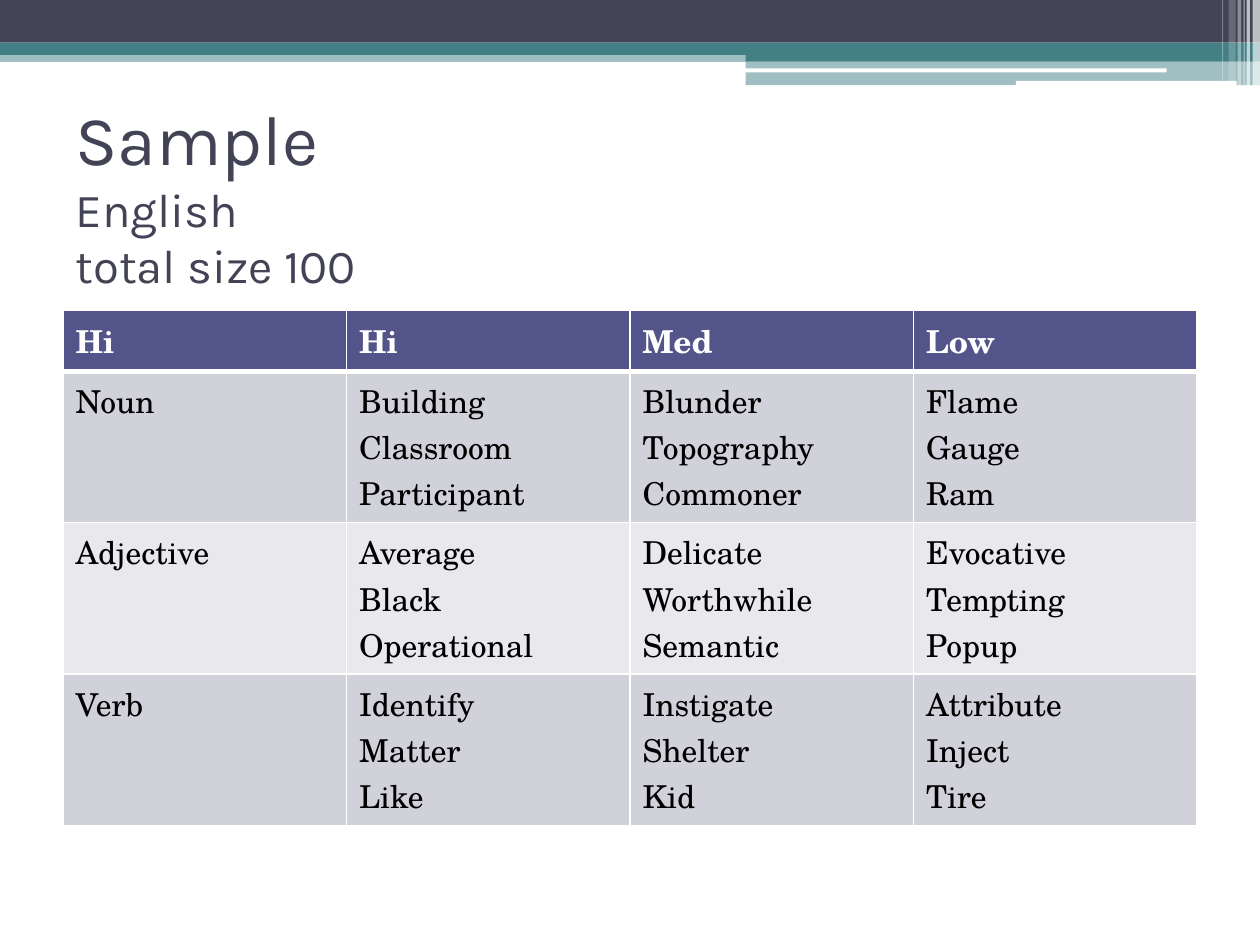
from lxml import etree
from pptx import Presentation
from pptx.dml.color import RGBColor
from pptx.enum import shapes, text
from pptx.oxml import ns
from pptx.util import Cm, Pt

NAVY, TEAL, WHITE = "424456", "438086", "FFFFFF"
HEADER_FILL, BAND_FILLS = "53548A", ("D1D1DA", "E9E9ED")
RECTANGLE = shapes.MSO_SHAPE.RECTANGLE
ROUNDED = shapes.MSO_SHAPE.ROUNDED_RECTANGLE


def paint(fill, color, opacity=100):
    fill.solid()
    fill.fore_color.rgb = RGBColor.from_string(color)
    if opacity < 100:
        color_element = fill._xPr.find(".//" + ns.qn("a:srgbClr"))
        alpha = etree.SubElement(color_element, ns.qn("a:alpha"))
        alpha.set("val", str(opacity * 1000))


def add_border(cell, side, points):
    """Draw a white line on one side of a cell; call before filling the cell."""
    line = etree.SubElement(cell._tc.get_or_add_tcPr(), ns.qn("a:ln" + side))
    line.set("w", str(Pt(points)))
    solid = etree.SubElement(line, ns.qn("a:solidFill"))
    etree.SubElement(solid, ns.qn("a:srgbClr")).set("val", WHITE)


presentation = Presentation()
presentation.slide_width, presentation.slide_height = Cm(25.4), Cm(19.05)
slide = presentation.slides.add_slide(presentation.slide_layouts[5])

# Header bars and, at the right edge, translucent stripes
# (kind, left, top, width, height, colour, opacity)
decorations = [
    (RECTANGLE, 0, 1.02, 25.4, 0.23, TEAL, 50),
    (RECTANGLE, 0, 0, 25.4, 0.86, NAVY, 100),
    (RECTANGLE, 0, 0.86, 25.4, 0.25, TEAL, 100),
    (RECTANGLE, 15.03, 0.98, 10.37, 0.25, TEAL, 100),
    (RECTANGLE, 15.03, 1.23, 10.37, 0.49, TEAL, 50),
    (ROUNDED, 15.01, 1.38, 8.51, 0.08, WHITE, 100),
    (ROUNDED, 20.48, 1.63, 4.45, 0.1, WHITE, 100),
]
stripes = [
    (25.25, 0.15, 1.73, 65),
    (25.13, 0.07, 1.73, 65),
    (25.07, 0.02, 1.73, 60),
    (24.95, 0.07, 1.73, 40),
    (24.77, 0.14, 1.63, 20),
    (24.64, 0.02, 1.63, 30),
]
for left, width, height, opacity in stripes:
    decorations.append((RECTANGLE, left, 0, width, height, WHITE, opacity))

for kind, left, top, width, height, color, opacity in decorations:
    shape = slide.shapes.add_shape(kind, Cm(left), Cm(top), Cm(width), Cm(height))
    shape.shadow.inherit = False
    shape.line.fill.background()
    paint(shape.fill, color, opacity)

# Title
title = slide.shapes.title
title.left, title.top, title.width, title.height = Cm(1.27), Cm(1.7), Cm(22.86), Cm(4.45)
frame = title.text_frame
frame.auto_size = text.MSO_AUTO_SIZE.NONE
frame.vertical_anchor = text.MSO_ANCHOR.MIDDLE
paragraph = frame.paragraphs[0]
paragraph.alignment = text.PP_ALIGN.LEFT
paragraph.font.name = "Karla"
paragraph.font.color.rgb = RGBColor.from_string(NAVY)
title_lines = [("Sample", 40), ("English", 27), ("total size 100", 27)]
for index, (words, size) in enumerate(title_lines):
    if index:
        paragraph.add_line_break()
    run = paragraph.add_run()
    run.text = words
    run.font.size = Pt(size)
    run.font.name = "Karla"
    run.font.color.rgb = RGBColor.from_string(NAVY)

# Word table: one paragraph per word
rows = [
    ["Hi", "Hi", "Med", "Low"],
    ["Noun", "Building\nClassroom\nParticipant", "Blunder\nTopography\nCommoner",
     "Flame\nGauge\nRam"],
    ["Adjective", "Average\nBlack\nOperational", "Delicate\nWorthwhile\nSemantic",
     "Evocative\nTempting\nPopup"],
    ["Verb", "Identify\nMatter\nLike", "Instigate\nShelter\nKid",
     "Attribute\nInject\nTire"],
]
row_heights = [1.2, 3.04, 3.04, 3.04]
table = slide.shapes.add_table(
    len(rows), len(rows[0]), Cm(1.27), Cm(6.25), Cm(22.86), Cm(sum(row_heights))
).table
for row_index, words_in_row in enumerate(rows):
    table.rows[row_index].height = Cm(row_heights[row_index])
    is_header = row_index == 0
    for column_index, words in enumerate(words_in_row):
        cell = table.cell(row_index, column_index)
        add_border(cell, "L", 1)
        add_border(cell, "R", 1)
        add_border(cell, "T", 3 if row_index == 1 else 1)
        add_border(cell, "B", 3 if is_header else 1)
        paint(cell.fill, HEADER_FILL if is_header else BAND_FILLS[(row_index - 1) % 2])
        cell.text = words
        for paragraph in cell.text_frame.paragraphs:
            for font in [paragraph.font] + [run.font for run in paragraph.runs]:
                font.name = "TeX Gyre Schola"
                font.size = Pt(18)
                font.bold = is_header
                font.color.rgb = RGBColor.from_string(WHITE if is_header else "000000")

presentation.save("out.pptx")
